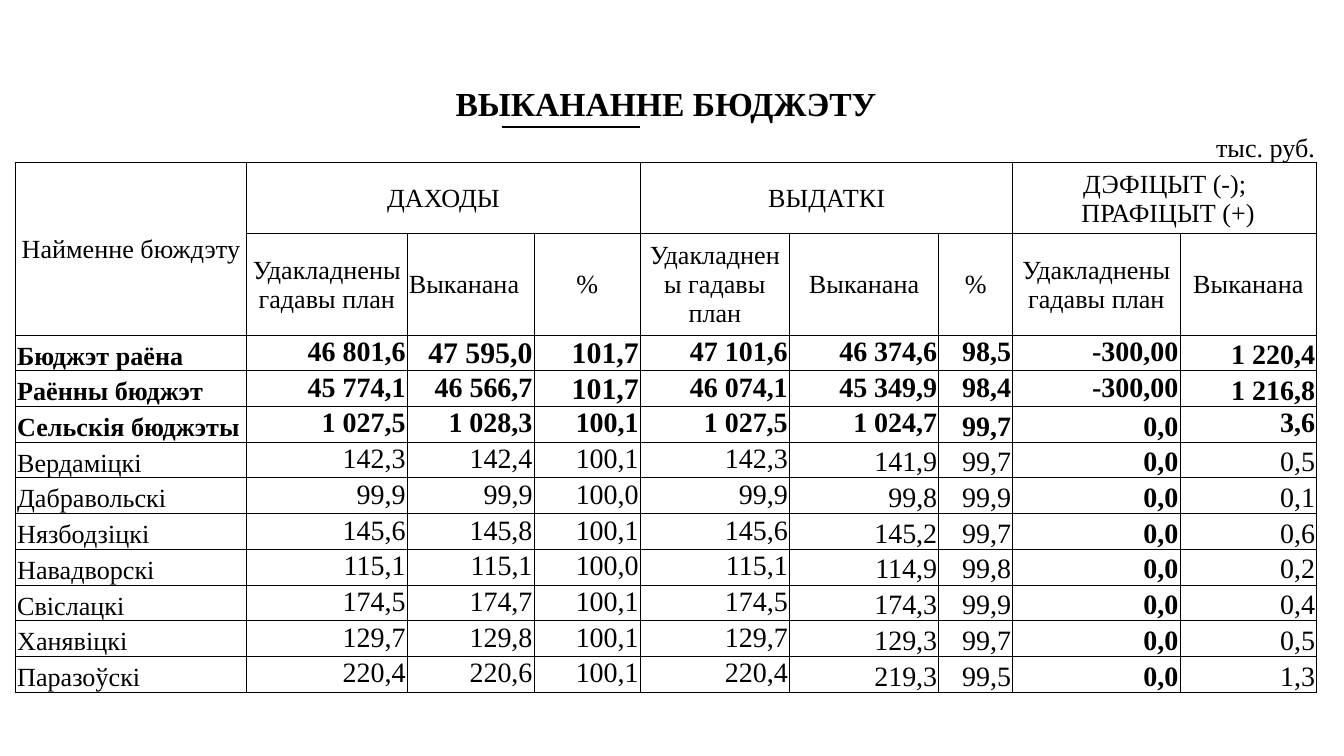
from lxml.etree import SubElement
from pptx import Presentation
from pptx.dml.color import RGBColor
from pptx.enum.text import MSO_ANCHOR, PP_ALIGN
from pptx.oxml.ns import qn
from pptx.util import Pt

BLACK = RGBColor(0x00, 0x00, 0x00)
TOP, MIDDLE, BOTTOM = MSO_ANCHOR.TOP, MSO_ANCHOR.MIDDLE, MSO_ANCHOR.BOTTOM
LEFT, CENTER, RIGHT = PP_ALIGN.LEFT, PP_ALIGN.CENTER, PP_ALIGN.RIGHT

COLUMN_WIDTHS = [123.8, 72.2, 13.9, 50.6, 17.4, 56.9, 79.9,
                 64.2, 15.9, 39.6, 89.6, 8.8, 64.5]
BODY_ROWS = 10
ROW_HEIGHTS = [24.2, 19.2, 37.6, 54.6] + [19.16] * BODY_ROWS
FIRST_GRID_ROW, FIRST_BODY_ROW = 2, 4

# First column and width in columns of each visible column
FIELDS = [(0, 1), (1, 2), (3, 2), (5, 1), (6, 1), (7, 2), (9, 1), (10, 1), (11, 2)]

GROUPS = [(1, 5, ["ДАХОДЫ"]), (6, 4, ["ВЫДАТКІ"]),
          (10, 3, ["ДЭФІЦЫТ (-);", " ПРАФІЦЫТ (+)"])]
PLAN, DONE = "Удакладнены гадавы план", "Выканана"
SUBHEADS = [PLAN, DONE, "%", PLAN, DONE, "%", PLAN, DONE]

BUDGETS = [
    ["Бюджэт раёна", "46 801,6", "47 595,0", "101,7", "47 101,6", "46 374,6", "98,5", "-300,00", "1 220,4"],
    ["Раённы бюджэт", "45 774,1", "46 566,7", "101,7", "46 074,1", "45 349,9", "98,4", "-300,00", "1 216,8"],
    ["Сельскія бюджэты", "1 027,5", "1 028,3", "100,1", "1 027,5", "1 024,7", "99,7", "0,0", "3,6"],
    ["Вердаміцкі", "142,3", "142,4", "100,1", "142,3", "141,9", "99,7", "0,0", "0,5"],
    ["Дабравольскі", "99,9", "99,9", "100,0", "99,9", "99,8", "99,9", "0,0", "0,1"],
    ["Нязбодзіцкі", "145,6", "145,8", "100,1", "145,6", "145,2", "99,7", "0,0", "0,6"],
    ["Навадворскі", "115,1", "115,1", "100,0", "115,1", "114,9", "99,8", "0,0", "0,2"],
    ["Свіслацкі", "174,5", "174,7", "100,1", "174,5", "174,3", "99,9", "0,0", "0,4"],
    ["Ханявіцкі", "129,7", "129,8", "100,1", "129,7", "129,3", "99,7", "0,0", "0,5"],
    ["Паразоўскі", "220,4", "220,6", "100,1", "220,4", "219,3", "99,5", "0,0", "1,3"],
]
SUMMARY_ROWS = 3
# Fields set at the bottom of the cell, by row; the rest of the rows use the default
BOTTOM_FIELDS = {0: {0, 8}, 1: {0, 8}, 2: {0, 6, 7}}
DETAIL_BOTTOM_FIELDS = {0, 5, 6, 7, 8}
LARGE_VALUES = {(0, 2), (0, 3), (1, 3)}


class SlideBuilder:
    font = "Times New Roman"
    color = BLACK
    margin = Pt(0.9)

    def __init__(self, slide):
        self.slide = slide

    def table(self, left, top, widths, heights):
        shape = self.slide.shapes.add_table(len(heights), len(widths), Pt(left), Pt(top),
                                            Pt(sum(widths)), Pt(sum(heights)))
        table = shape.table
        table.first_row = table.horz_banding = False
        for column, width in zip(table.columns, widths):
            column.width = Pt(width)
        for row, height in zip(table.rows, heights):
            row.height = Pt(height)
        for cell in table.iter_cells():
            cell.fill.background()
            cell.margin_left = cell.margin_right = cell.margin_top = self.margin
            cell.margin_bottom = 0
            cell.text_frame.paragraphs[0].font.size = Pt(12)
        return table

    def borders(self, cell, **widths):
        properties = cell._tc.get_or_add_tcPr()
        for index, side in enumerate("LRTB"):
            width = widths.get(side, 0)
            line = SubElement(properties, qn("a:ln" + side), w=str(Pt(width)))
            properties.insert(index, line)
            if width:
                fill = SubElement(line, qn("a:solidFill"))
                SubElement(fill, qn("a:srgbClr"), val=str(self.color))
            else:
                SubElement(line, qn("a:noFill"))

    def merge(self, table, row, column, rows, columns):
        if rows * columns > 1:
            table.cell(row, column).merge(table.cell(row + rows - 1, column + columns - 1))

    def text(self, cell, lines, size=14, bold=False, align=CENTER, anchor=MIDDLE):
        cell.vertical_anchor = anchor
        frame = cell.text_frame
        for index, line in enumerate(lines):
            paragraph = frame.add_paragraph() if index else frame.paragraphs[0]
            paragraph.alignment = align
            run = paragraph.add_run()
            run.text = line
            run.font.name = self.font
            run.font.size = Pt(size)
            run.font.bold = bold
            run.font.color.rgb = self.color


def main():
    presentation = Presentation()
    presentation.slide_width, presentation.slide_height = Pt(720), Pt(405)
    slide = presentation.slides.add_slide(presentation.slide_layouts[6])
    builder = SlideBuilder(slide)
    table = builder.table(8.3, 43.9, COLUMN_WIDTHS, ROW_HEIGHTS)

    # Borders: a full grid below, a short rule under the heading
    for row in range(len(ROW_HEIGHTS)):
        for column in range(len(COLUMN_WIDTHS)):
            if row >= FIRST_GRID_ROW:
                sides = dict.fromkeys("LRTB", 0.5)
            elif row == 1:
                sides = {"B": 0.5, "T": 1 if column in (4, 5) else 0}
            else:
                sides = {}
            builder.borders(table.cell(row, column), **sides)

    # Heading and unit
    builder.merge(table, 0, 0, 1, len(COLUMN_WIDTHS))
    builder.text(table.cell(0, 0), ["ВЫКАНАННЕ БЮДЖЭТУ"], size=18, bold=True)
    for column in (2, 4, 8, 10):
        builder.merge(table, 1, column, 1, 2)
    builder.text(table.cell(1, 12), ["тыс. руб."], align=RIGHT, anchor=BOTTOM)

    # Column heads
    builder.merge(table, 2, 0, 2, 1)
    builder.text(table.cell(2, 0), ["Найменне бюждэту"])
    for column, span, lines in GROUPS:
        builder.merge(table, 2, column, 1, span)
        builder.text(table.cell(2, column), lines)
    for (column, span), label in zip(FIELDS[1:], SUBHEADS):
        builder.merge(table, 3, column, 1, span)
        builder.text(table.cell(3, column), [label], align=LEFT if column == 3 else CENTER)

    # Budget rows
    for index, values in enumerate(BUDGETS):
        row = FIRST_BODY_ROW + index
        bottom_fields = BOTTOM_FIELDS.get(index, DETAIL_BOTTOM_FIELDS)
        for field, ((column, span), value) in enumerate(zip(FIELDS, values)):
            builder.merge(table, row, column, 1, span)
            size = 14 if field == 0 else 16 if (index, field) in LARGE_VALUES else 15
            builder.text(table.cell(row, column), [value], size=size,
                         bold=index < SUMMARY_ROWS or field == 7,
                         align=RIGHT if field else LEFT,
                         anchor=BOTTOM if field in bottom_fields else TOP)

    presentation.save("out.pptx")


if __name__ == "__main__":
    main()
